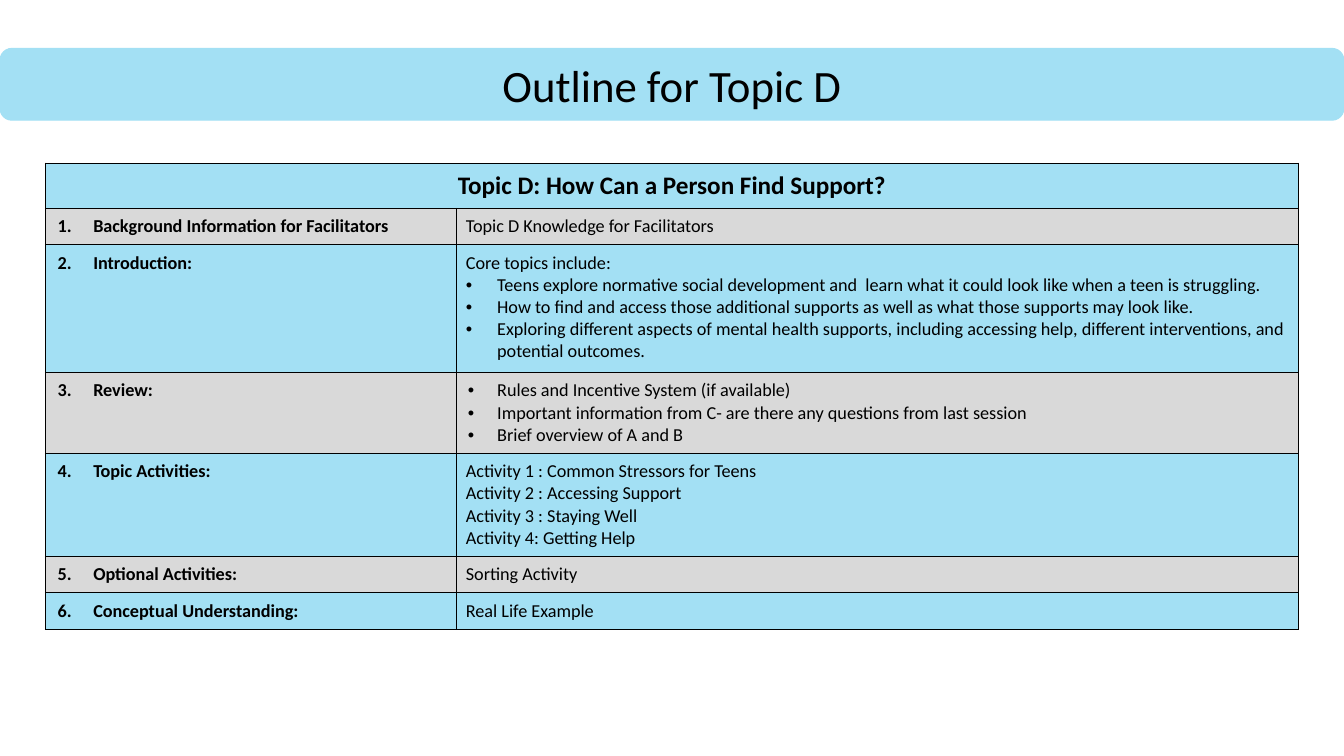
from lxml.etree import SubElement
from pptx import Presentation
from pptx.dml.color import RGBColor
from pptx.enum.shapes import MSO_SHAPE as Preset
from pptx.enum.text import MSO_ANCHOR as Anchor, MSO_AUTO_SIZE as AutoSize, PP_ALIGN as Align
from pptx.oxml.ns import qn
from pptx.util import Cm, Pt

BLUE, GREY, BLACK = "A3E0F4", "D9D9D9", "000000"
FONT = "Calibri"
SLIDE_WIDTH, SLIDE_HEIGHT = 33.87, 19.05
BAR_TOP, BAR_HEIGHT = 1.22, 1.81
TABLE_LEFT, TABLE_TOP = 1.14, 4.11
COLUMN_WIDTHS = [10.36, 21.23]
HEADER_HEIGHT = 1.11

TITLE = "Outline for Topic D"
HEADER = "Topic D: How Can a Person Find Support?"
SECTIONS = [
    ("Background Information for Facilitators", 0.91, ["Topic D Knowledge for Facilitators"], []),
    ("Introduction:", 3.22, ["Core topics include:"], [
        "Teens explore normative social development and  learn what it could look like when a teen is struggling.",
        "How to find and access those additional supports as well as what those supports may look like.",
        "Exploring different aspects of mental health supports, including accessing help, "
        "different interventions, and potential outcomes.",
    ]),
    ("Review:", 2.02, [], [
        "Rules and Incentive System (if available)",
        "Important information from C- are there any questions from last session",
        "Brief overview of A and B",
    ]),
    ("Topic Activities:", 2.57, [
        "Activity 1 : Common Stressors for Teens",
        "Activity 2 : Accessing Support",
        "Activity 3 : Staying Well",
        "Activity 4: Getting Help",
    ], []),
    ("Optional Activities:", 0.91, ["Sorting Activity"], []),
    ("Conceptual Understanding:", 0.89, ["Real Life Example"], []),
]


def color(value):
    return RGBColor.from_string(value)


def add_marker(paragraph, indent, hanging, number):
    properties = paragraph._p.get_or_add_pPr()
    properties.set("marL", str(Cm(indent)))
    properties.set("indent", str(-Cm(hanging)))
    if number:
        SubElement(properties, qn("a:buFont"), typeface="+mj-lt")
        SubElement(properties, qn("a:buAutoNum"), type="arabicPeriod", startAt=str(number))
    else:
        SubElement(properties, qn("a:buFont"), typeface="Arial")
        SubElement(properties, qn("a:buChar"), char="•")


def write(frame, text, size=13, bold=False, align=Align.LEFT, marker=None, number=None):
    paragraph = frame.paragraphs[0]
    if paragraph.runs:
        paragraph = frame.add_paragraph()
    paragraph.alignment = align
    if marker:
        add_marker(paragraph, *marker, number)
    run = paragraph.add_run()
    run.text = text
    run.font.name = FONT
    run.font.size = Pt(size)
    run.font.bold = bold
    run.font.color.rgb = color(BLACK)


def format_cell(cell, fill):
    cell.margin_left = cell.margin_right = Cm(0.24)
    cell.margin_top = cell.margin_bottom = Cm(0.18)
    properties = cell._tc.get_or_add_tcPr()
    for side in ("lnL", "lnR", "lnT", "lnB"):
        border = SubElement(properties, qn(f"a:{side}"), w=str(Pt(0.75)))
        border_fill = SubElement(border, qn("a:solidFill"))
        SubElement(border_fill, qn("a:srgbClr"), val=BLACK)
    cell.fill.solid()
    cell.fill.fore_color.rgb = color(fill)


def add_title(slide):
    box = Cm(0), Cm(BAR_TOP), Cm(SLIDE_WIDTH), Cm(BAR_HEIGHT)
    bar = slide.shapes.add_shape(Preset.ROUNDED_RECTANGLE, *box)
    bar.shadow.inherit = False
    bar.fill.solid()
    bar.fill.fore_color.rgb = color(BLUE)
    bar.line.color.rgb = color(BLUE)
    bar.line.width = Pt(0.75)
    title = slide.shapes.title
    title.left, title.top, title.width, title.height = box
    slide.shapes._spTree.append(title._element)
    frame = title.text_frame
    frame.auto_size = AutoSize.NONE
    frame.vertical_anchor = Anchor.MIDDLE
    frame.margin_left = frame.margin_right = frame.margin_top = frame.margin_bottom = Cm(0.18)
    write(frame, TITLE, size=32, align=Align.CENTER)


def add_outline(slide):
    heights = [HEADER_HEIGHT] + [section[1] for section in SECTIONS]
    table = slide.shapes.add_table(
        len(heights), len(COLUMN_WIDTHS), Cm(TABLE_LEFT), Cm(TABLE_TOP),
        Cm(sum(COLUMN_WIDTHS)), Cm(sum(heights))).table
    table.horz_banding = False
    for column, width in zip(table.columns, COLUMN_WIDTHS):
        column.width = Cm(width)
    for index, (row, height) in enumerate(zip(table.rows, heights)):
        row.height = Cm(height)
        for cell in row.cells:
            format_cell(cell, GREY if index % 2 else BLUE)
    header = table.cell(0, 0)
    header.merge(table.cell(0, 1))
    write(header.text_frame, HEADER, size=18, bold=True, align=Align.CENTER)
    for number, (heading, _, lines, bullets) in enumerate(SECTIONS, 1):
        write(table.cell(number, 0).text_frame, heading, bold=True, marker=(0.97, 0.9), number=number)
        details = table.cell(number, 1).text_frame
        for line in lines:
            write(details, line)
        for bullet in bullets:
            write(details, bullet, marker=(0.79, 0.79 if lines else 0.74))


def main():
    presentation = Presentation()
    presentation.slide_width = Cm(SLIDE_WIDTH)
    presentation.slide_height = Cm(SLIDE_HEIGHT)
    slide = presentation.slides.add_slide(presentation.slide_layouts[5])
    add_title(slide)
    add_outline(slide)
    presentation.save("out.pptx")


if __name__ == "__main__":
    main()
